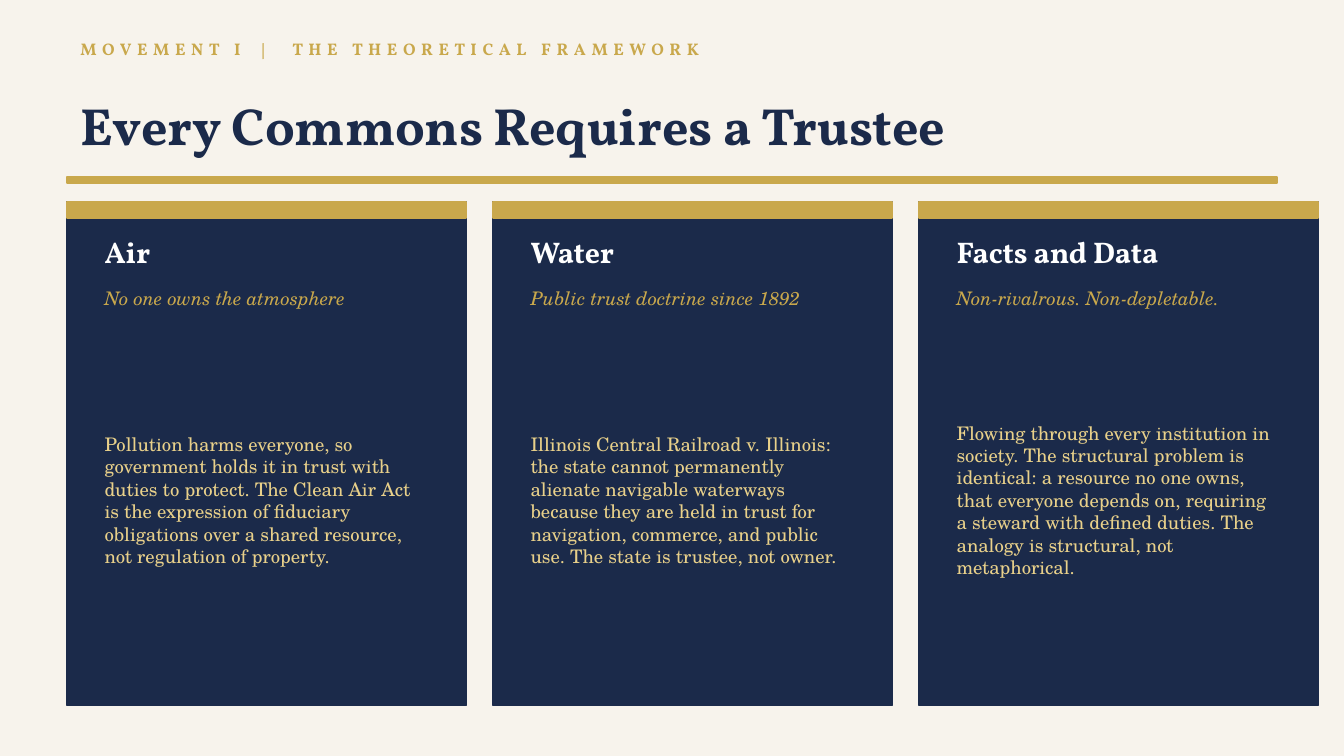
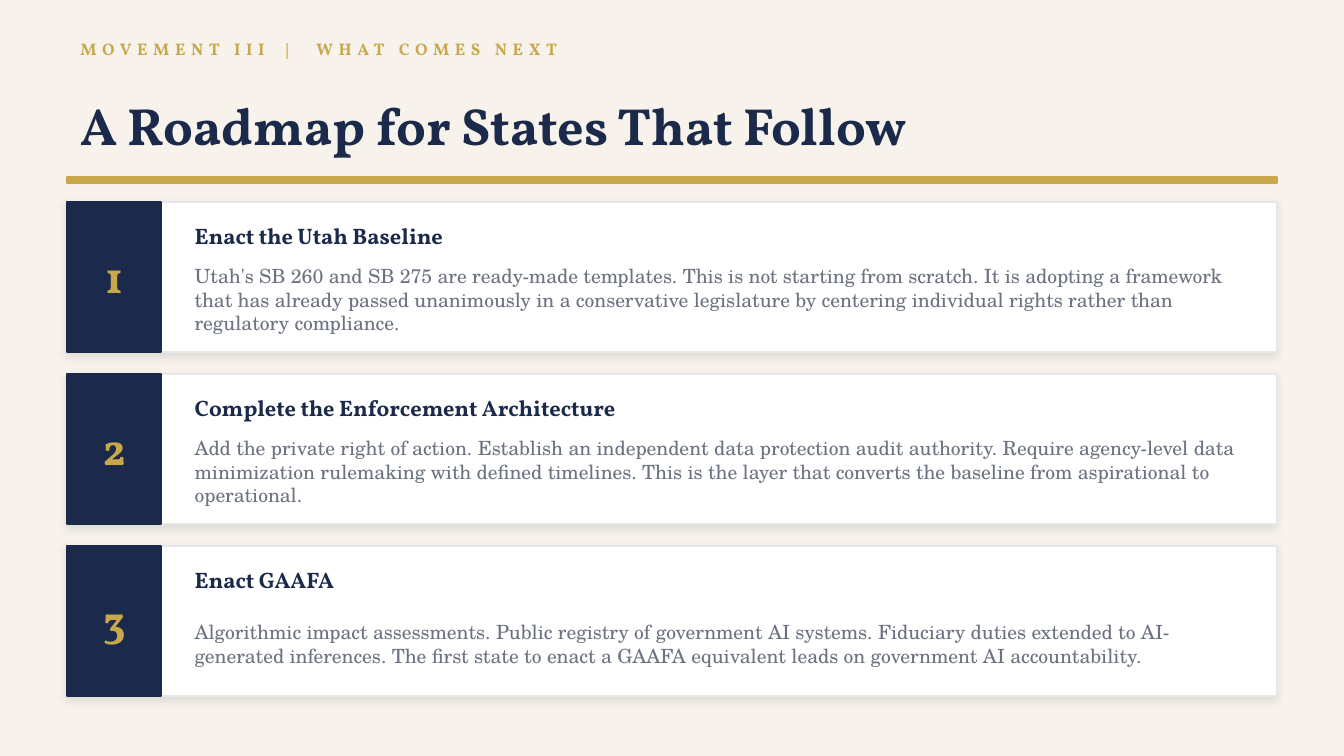
from lxml.etree import SubElement
from pptx import Presentation
from pptx.dml.color import RGBColor
from pptx.enum.shapes import MSO_SHAPE
from pptx.enum.text import MSO_ANCHOR, PP_ALIGN
from pptx.oxml.ns import qn
from pptx.util import Inches, Pt

NAVY, GOLD, PALE_GOLD = "1B2A4A", "C9A84C", "E8D08A"
CREAM, WHITE, GREY, BORDER = "F7F3EC", "FFFFFF", "6B7280", "E5E7EB"
HEADING_FONT, BODY_FONT = "Vollkorn", "TeX Gyre Schola"
LEFT, TOP, WIDTH = 0.5, 1.5, 9


def add_box(page, left, top, width, height, fill, line=None):
    """Add a flat rectangle, outlined in its fill colour unless line is given."""
    box = page.shapes.add_shape(
        MSO_SHAPE.RECTANGLE, Inches(left), Inches(top), Inches(width), Inches(height))
    box.shadow.inherit = False
    box.fill.solid()
    box.fill.fore_color.rgb = RGBColor.from_string(fill)
    box.line.color.rgb = RGBColor.from_string(line or fill)
    box.line.width = Pt(1)
    return box


def add_text(page, left, top, width, height, texts, size, color,
             font=HEADING_FONT, bold=False, italic=False, align=PP_ALIGN.LEFT):
    """Add a one-paragraph text box with one run per text and return the runs."""
    box = page.shapes.add_textbox(
        Inches(left), Inches(top), Inches(width), Inches(height))
    frame = box.text_frame
    frame.word_wrap = True
    frame.vertical_anchor = MSO_ANCHOR.MIDDLE
    para = frame.paragraphs[0]
    para.alignment = align
    for text in texts:
        span = para.add_run()
        span.text = text
        span.font.name = font
        span.font.size = Pt(size)
        span.font.bold = bold
        span.font.italic = italic
        span.font.color.rgb = RGBColor.from_string(color)
    return para.runs


deck = Presentation()
deck.slide_width = Inches(10)
deck.slide_height = Inches(5.625)

# Background, section label, title and rule on both slides
headings = [
    ("MOVEMENT I", "THE THEORETICAL FRAMEWORK", "Every Commons Requires a Trustee"),
    ("MOVEMENT III", "WHAT COMES NEXT", "A Roadmap for States That Follow"),
]
pages = []
for movement, topic, title in headings:
    page = deck.slides.add_slide(deck.slide_layouts[6])
    page.background.fill.solid()
    page.background.fill.fore_color.rgb = RGBColor.from_string(CREAM)
    label = add_text(page, LEFT, 0.22, WIDTH, 0.28, [movement, " | ", topic],
                     9, GOLD, bold=True)
    # Wider tracking sets the separator apart
    for span, tracking in zip(label, (300, 650, 300)):
        span.font._element.set("spc", str(tracking))
    add_text(page, LEFT, 0.55, WIDTH, 0.75, [title], 28, NAVY, bold=True)
    add_box(page, LEFT, 1.32, WIDTH, 0.04, GOLD)
    pages.append(page)
commons_page, roadmap_page = pages

# Slide 1: three cards side by side
commons = [
    ("Air", "No one owns the atmosphere",
     "Pollution harms everyone, so government holds it in trust with duties to "
     "protect. The Clean Air Act is the expression of fiduciary obligations over "
     "a shared resource, not regulation of property."),
    ("Water", "Public trust doctrine since 1892",
     "Illinois Central Railroad v. Illinois: the state cannot permanently alienate "
     "navigable waterways because they are held in trust for navigation, commerce, "
     "and public use. The state is trustee, not owner."),
    ("Facts and Data", "Non-rivalrous. Non-depletable.",
     "Flowing through every institution in society. The structural problem is "
     "identical: a resource no one owns, that everyone depends on, requiring a "
     "steward with defined duties. The analogy is structural, not metaphorical."),
]
card_width, card_gap, text_width = 2.97, 0.2, 2.6
for index, (name, tagline, body) in enumerate(commons):
    left = LEFT + index * (card_width + card_gap)
    text_left = left + 0.18
    add_box(commons_page, left, TOP, card_width, 3.75, NAVY)
    add_box(commons_page, left, TOP, card_width, 0.12, GOLD)
    add_text(commons_page, text_left, 1.68, text_width, 0.38, [name],
             16, WHITE, bold=True)
    add_text(commons_page, text_left, 2.08, text_width, 0.28, [tagline],
             10, GOLD, BODY_FONT, italic=True)
    add_text(commons_page, text_left, 2.42, text_width, 2.6, [body],
             10, PALE_GOLD, BODY_FONT)

# Slide 2: three numbered steps, stacked
steps = [
    ("Enact the Utah Baseline",
     "Utah's SB 260 and SB 275 are ready-made templates. This is not starting from "
     "scratch. It is adopting a framework that has already passed unanimously in a "
     "conservative legislature by centering individual rights rather than "
     "regulatory compliance."),
    ("Complete the Enforcement Architecture",
     "Add the private right of action. Establish an independent data protection "
     "audit authority. Require agency-level data minimization rulemaking with "
     "defined timelines. This is the layer that converts the baseline from "
     "aspirational to operational."),
    ("Enact GAAFA",
     "Algorithmic impact assessments. Public registry of government AI systems. "
     "Fiduciary duties extended to AI-generated inferences. The first state to "
     "enact a GAAFA equivalent leads on government AI accountability."),
]
step_height, step_gap, badge_width = 1.12, 0.16, 0.7
for index, (name, body) in enumerate(steps):
    top = TOP + index * (step_height + step_gap)
    panel = add_box(roadmap_page, LEFT, top, WIDTH, step_height, WHITE, BORDER)
    effects = panel._element.spPr.find(qn("a:effectLst"))
    shadow = SubElement(effects, qn("a:outerShdw"), blurRad=str(Pt(4)),
                        dist=str(Pt(2)), dir=str(135 * 60000),
                        algn="bl", rotWithShape="0")
    shade = SubElement(shadow, qn("a:srgbClr"), val="000000")
    SubElement(shade, qn("a:alpha"), val="10000")
    add_box(roadmap_page, LEFT, top, badge_width, step_height, NAVY)
    add_text(roadmap_page, LEFT, top + 0.3, badge_width, 0.5, [str(index + 1)],
             24, GOLD, bold=True, align=PP_ALIGN.CENTER)
    add_text(roadmap_page, 1.35, top + 0.1, 8, 0.3, [name], 12, NAVY, bold=True)
    add_text(roadmap_page, 1.35, top + 0.43, 8, 0.6, [body], 10.5, GREY, BODY_FONT)

deck.save("out.pptx")
